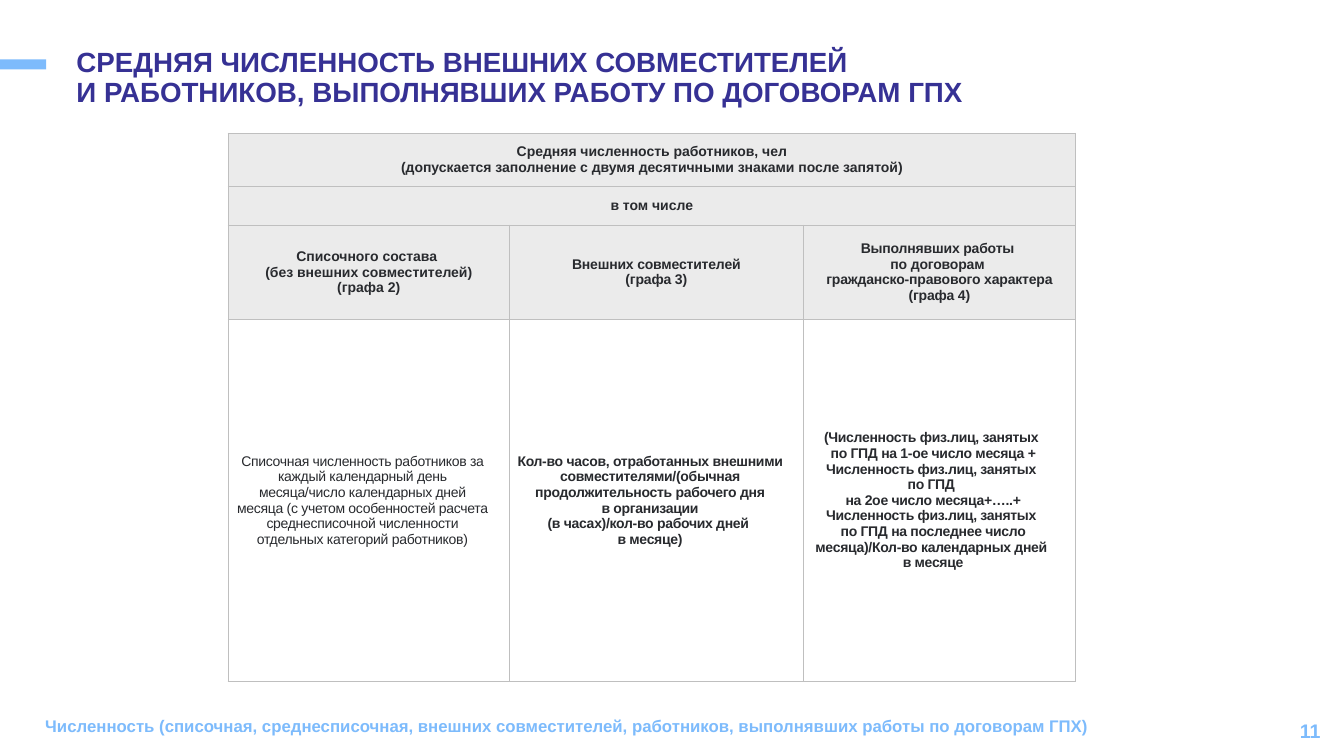
from copy import deepcopy

from lxml.etree import SubElement
from pptx import Presentation
from pptx.dml.color import RGBColor as RGB
from pptx.enum.shapes import MSO_SHAPE as SHAPE
from pptx.enum.text import MSO_ANCHOR as ANCHOR, PP_ALIGN as ALIGN
from pptx.oxml.ns import qn
from pptx.util import Pt

COLORS = {
    "navy": "363194",
    "sky": "7DBBFC",
    "ink": "282A2E",
    "head": "EBEBEB",
    "border": "BFBFBF",
}


def write(tf, text, size=10, color="ink", bold=True, align=ALIGN.LEFT,
          anchor=ANCHOR.TOP, line=None, spacing=0, right=0):
    tf.word_wrap = True
    tf.vertical_anchor = anchor
    for i, part in enumerate(text.split("\n\n")):
        p = tf.paragraphs[0] if i == 0 else tf.add_paragraph()
        p.text = part
        p.alignment = align
        if line:
            p.line_spacing = line
        if right:
            p._p.get_or_add_pPr().set("marR", str(Pt(right)))
        for r in p.runs:
            r.font.name = "Arial"
            r.font.size = Pt(size)
            r.font.bold = bold
            r.font.color.rgb = RGB.from_string(COLORS[color])
            if spacing:
                r.font._element.set("spc", str(round(spacing * 100)))
        for br in p._p.findall(qn("a:br")):
            br.insert(0, deepcopy(p.runs[0].font._element))


class Deck:
    def __init__(self, width, height):
        self.prs = Presentation()
        self.prs.slide_width, self.prs.slide_height = Pt(width), Pt(height)
        self.slide = self.prs.slides.add_slide(self.prs.slide_layouts[6])

    def bar(self, x, y, w, h, color):
        sp = self.slide.shapes.add_shape(SHAPE.RECTANGLE, Pt(x), Pt(y), Pt(w), Pt(h))
        sp.shadow.inherit = False
        sp.fill.solid()
        sp.fill.fore_color.rgb = RGB.from_string(COLORS[color])
        sp.line.fill.background()

    def text(self, x, y, w, h, text, **style):
        sp = self.slide.shapes.add_textbox(Pt(x), Pt(y), Pt(w), Pt(h))
        write(sp.text_frame, text, **style)

    def table(self, x, y, widths, heights):
        frame = self.slide.shapes.add_table(
            len(heights), len(widths), Pt(x), Pt(y), Pt(sum(widths)), Pt(sum(heights)))
        tbl = frame.table
        tbl.first_row = tbl.horz_banding = False
        for col, width in zip(tbl.columns, widths):
            col.width = Pt(width)
        for row, height in zip(tbl.rows, heights):
            row.height = Pt(height)
        return tbl

    def cell(self, cell, fill=None, pad=3.6):
        cell.margin_left = cell.margin_right = Pt(5.4)
        cell.margin_top = cell.margin_bottom = Pt(pad)
        tc_pr = cell._tc.get_or_add_tcPr()
        for side in ("L", "R", "T", "B"):
            ln = SubElement(tc_pr, qn(f"a:ln{side}"), w=str(Pt(0.5)))
            solid = SubElement(ln, qn("a:solidFill"))
            SubElement(solid, qn("a:srgbClr"), val=COLORS["border"])
        if fill:
            cell.fill.solid()
            cell.fill.fore_color.rgb = RGB.from_string(COLORS[fill])
        else:
            cell.fill.background()

    def cell_text(self, cell, text, **style):
        write(cell.text_frame, text, align=ALIGN.CENTER, **style)
        cell.vertical_anchor = ANCHOR.MIDDLE


SPANNING = [
    "Средняя численность работников, чел\n\n"
    "(допускается заполнение с двумя десятичными знаками после запятой)",
    "в том числе",
]
HEADINGS = [
    ("Списочного состава \n(без внешних совместителей)\n\n(графа 2)", 0),
    ("Внешних совместителей\n\n(графа 3)", -0.1),
    ("Выполнявших работы \nпо договорам \nгражданско-правового характера\n\n(графа 4)", -0.1),
]
FORMULAS = [
    ("Списочная численность работников за каждый календарный день "
     "месяца/число календарных дней месяца (с учетом особенностей расчета "
     "среднесписочной численности отдельных категорий работников)", False),
    ("Кол-во часов, отработанных внешними совместителями/(обычная "
     "продолжительность рабочего дня\n в организации \n"
     "(в часах)/кол-во рабочих дней \nв месяце)", True),
    ("(Численность физ.лиц, занятых \nпо ГПД на 1-ое число месяца + "
     "Численность физ.лиц, занятых \nпо ГПД \nна 2ое число месяца+…..+ "
     "Численность физ.лиц, занятых \nпо ГПД на последнее число "
     "месяца)/Кол-во календарных дней \nв месяце", True),
]


def main():
    deck = Deck(960, 540)
    deck.bar(0, 42.5, 33, 7, "sky")
    deck.text(734.4, 507.6, 216, 28.8, "11", size=14, color="sky",
              align=ALIGN.RIGHT, anchor=ANCHOR.MIDDLE)

    tbl = deck.table(162.9, 95.2, [200.9, 210, 194.4], [38, 27.6, 67.5, 258.5])
    last = len(tbl.rows) - 1
    for row in range(last + 1):
        for col in range(len(tbl.columns)):
            if row < last:
                deck.cell(tbl.cell(row, col), fill="head")
            else:
                deck.cell(tbl.cell(row, col), pad=0)
    for row, text in enumerate(SPANNING):
        tbl.cell(row, 0).merge(tbl.cell(row, 2))
        deck.cell_text(tbl.cell(row, 0), text)
    for col, (text, spacing) in enumerate(HEADINGS):
        deck.cell_text(tbl.cell(2, col), text, spacing=spacing)
    for col, (text, bold) in enumerate(FORMULAS):
        deck.cell_text(tbl.cell(last, col), text, bold=bold, spacing=-0.2, right=9)

    deck.text(47.5, 31, 749.5, 41,
              "СРЕДНЯЯ ЧИСЛЕННОСТЬ ВНЕШНИХ СОВМЕСТИТЕЛЕЙ \n"
              "И РАБОТНИКОВ, ВЫПОЛНЯВШИХ РАБОТУ ПО ДОГОВОРАМ ГПХ",
              size=19.8, color="navy", line=0.9)
    deck.text(25.2, 507.6, 805, 28.8,
              "Численность (списочная, среднесписочная, внешних совместителей, "
              "работников, выполнявших работы по договорам ГПХ)",
              size=12, color="sky")
    deck.prs.save("out.pptx")


if __name__ == "__main__":
    main()
